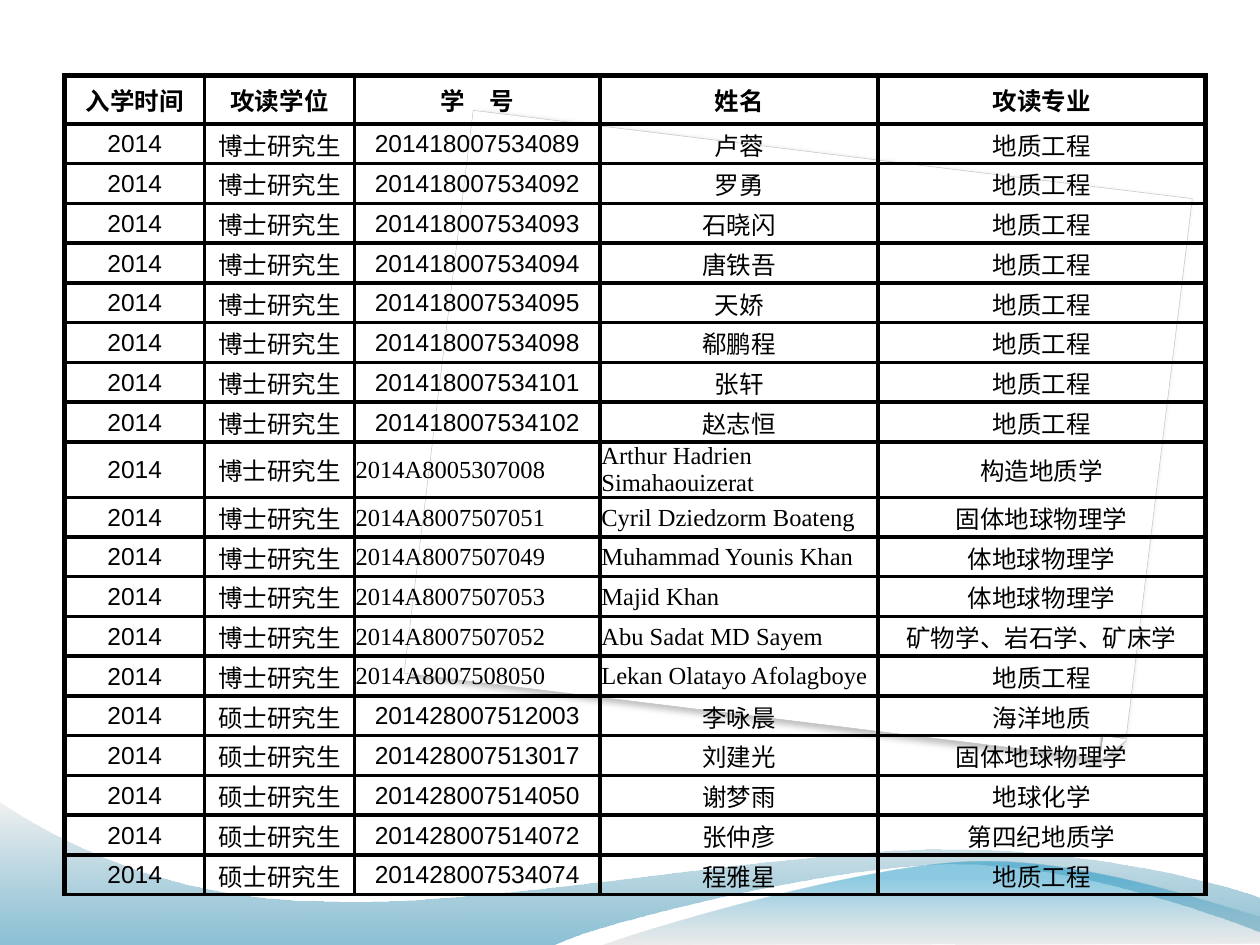
from lxml import etree
from pptx import Presentation
from pptx.dml.color import RGBColor
from pptx.enum.shapes import MSO_SHAPE
from pptx.enum.text import MSO_ANCHOR, PP_ALIGN
from pptx.oxml.ns import qn
from pptx.util import Pt

BLACK = RGBColor(0x00, 0x00, 0x00)
WHITE = RGBColor(0xFF, 0xFF, 0xFF)
SILVER = RGBColor(0xC0, 0xC0, 0xC0)
DEEP_BLUE = RGBColor(0x00, 0x74, 0xA1)
BRIGHT_BLUE = RGBColor(0x00, 0x8B, 0xBF)
PALE_GREY = RGBColor(0xE7, 0xE7, 0xE7)
MID_GREY = RGBColor(0xBD, 0xBD, 0xBD)

SNIP_ROUND = MSO_SHAPE.SNIP_ROUND_RECTANGLE
RIGHT_TRIANGLE = MSO_SHAPE.RIGHT_TRIANGLE
CENTER, LEFT = PP_ALIGN.CENTER, PP_ALIGN.LEFT
MIDDLE = MSO_ANCHOR.MIDDLE

CJK_FONT = "Noto Sans CJK SC"
LATIN_FONT = "Arial"
FOREIGN_FONT = "Times New Roman"

COLUMN_WIDTHS = [80, 85.5, 140.5, 158.75, 187]
HEADER_HEIGHT, ROW_HEIGHT, TWO_LINE_HEIGHT = 27.6, 22.72, 31.4
INNER_LINE, OUTER_LINE = 2.25, 3

YEAR = "2014"
DOCTOR, MASTER = "博士研究生", "硕士研究生"
HEADER = ["入学时间", "攻读学位", "学　号", "姓名", "攻读专业"]
STUDENTS = [
    (DOCTOR, "201418007534089", "卢蓉", "地质工程"),
    (DOCTOR, "201418007534092", "罗勇", "地质工程"),
    (DOCTOR, "201418007534093", "石晓闪", "地质工程"),
    (DOCTOR, "201418007534094", "唐铁吾", "地质工程"),
    (DOCTOR, "201418007534095", "天娇", "地质工程"),
    (DOCTOR, "201418007534098", "郗鹏程", "地质工程"),
    (DOCTOR, "201418007534101", "张轩", "地质工程"),
    (DOCTOR, "201418007534102", "赵志恒", "地质工程"),
    (DOCTOR, "2014A8005307008", "Arthur Hadrien Simahaouizerat", "构造地质学"),
    (DOCTOR, "2014A8007507051", "Cyril Dziedzorm Boateng", "固体地球物理学"),
    (DOCTOR, "2014A8007507049", "Muhammad Younis Khan", "体地球物理学"),
    (DOCTOR, "2014A8007507053", "Majid Khan", "体地球物理学"),
    (DOCTOR, "2014A8007507052", "Abu Sadat MD Sayem", "矿物学、岩石学、矿床学"),
    (DOCTOR, "2014A8007508050", "Lekan Olatayo Afolagboye", "地质工程"),
    (MASTER, "201428007512003", "李咏晨", "海洋地质"),
    (MASTER, "201428007513017", "刘建光", "固体地球物理学"),
    (MASTER, "201428007514050", "谢梦雨", "地球化学"),
    (MASTER, "201428007514072", "张仲彦", "第四纪地质学"),
    (MASTER, "201428007534074", "程雅星", "地质工程"),
]

# Outlines in points: a pair is a straight step, six numbers are a cubic curve.
LONG_WAVE = [
    (0, 540), (316.8, 540),
    (342.7, 527, 478.1, 493.9, 545.8, 493.9),
    (614.2, 493.9, 689.8, 521.3, 720, 532.8),
    (720.7, 513.4),
    (707.8, 507.6, 626.4, 484.6, 537.1, 485.3),
    (447.8, 485.3, 275, 519.1, 185, 514.8),
    (92.9, 514.1, 33.1, 479.5, -0.7, 457.9),
]
RIGHT_WAVE = [
    (344.9, 540),
    (366.5, 531.4, 491, 494.6, 553.7, 492.5),
    (616.3, 489.6, 691.9, 516.2, 720, 524.2),
    (720, 539.3),
]


def add_element(parent, tag, **attributes):
    return etree.SubElement(parent, qn(tag), attributes)


def add_shadow(shape, opacity, blur, distance, angle, **skew):
    effects = add_element(shape._element.spPr, "a:effectLst")
    shadow = add_element(effects, "a:outerShdw", blurRad=str(Pt(blur)), dist=str(Pt(distance)),
                         dir=str(angle * 60000), algn="tl", rotWithShape="0", **skew)
    color = add_element(shadow, "a:srgbClr", val=str(BLACK))
    add_element(color, "a:alpha", val=str(opacity * 1000))


def add_paper(slide, kind, box, line_color, line_width):
    """Add a white, tilted, upside-down shape of the paper sheet."""
    shape = slide.shapes.add_shape(kind, *map(Pt, box))
    shape.rotation = 7
    shape._element.spPr.xfrm.set("flipV", "1")
    shape.fill.solid()
    shape.fill.fore_color.rgb = WHITE
    shape.line.color.rgb = line_color
    shape.line.width = Pt(line_width)
    return shape


def bend(shape, outline):
    """Turn the straight steps of a freeform into the outline's cubic curves."""
    steps = list(shape._element.spPr.iter(qn("a:lnTo")))
    for step, segment in zip(steps, outline[1:]):
        if len(segment) == 6:
            curve = etree.Element(qn("a:cubicBezTo"))
            for x, y in zip(segment[::2], segment[1::2]):
                add_element(curve, "a:pt", x=str(Pt(x) - shape.left), y=str(Pt(y) - shape.top))
            step.getparent().replace(step, curve)


def add_wave(slide, outline, stops):
    """Add a wave filled upwards through (position, colour, opacity) stops."""
    anchors = [(Pt(segment[-2]), Pt(segment[-1])) for segment in outline]
    builder = slide.shapes.build_freeform(*anchors[0])
    builder.add_line_segments(anchors[1:], close=True)
    wave = builder.convert_to_shape()
    bend(wave, outline)
    wave.shadow.inherit = False
    wave.line.fill.background()
    wave.fill.gradient()
    wave.fill.gradient_angle = 90
    for stop, (position, color, _) in zip(wave.fill.gradient_stops, stops):
        stop.position = position
        stop.color.rgb = color
    for color, (_, _, opacity) in zip(wave._element.spPr.iter(qn("a:srgbClr")), stops):
        add_element(color, "a:alpha", val=str(opacity * 1000))


def set_borders(cell, left, right, top):
    widths = {"a:lnL": left, "a:lnR": right, "a:lnT": top, "a:lnB": INNER_LINE}
    properties = cell._tc.get_or_add_tcPr()
    for tag, width in widths.items():
        line = add_element(properties, tag, w=str(Pt(width)))
        add_element(add_element(line, "a:solidFill"), "a:srgbClr", val=str(BLACK))


def fill_cell(cell, text, font_name, alignment, bold):
    cell.fill.background()
    cell.vertical_anchor = MIDDLE
    cell.text_frame.text = text
    paragraph = cell.text_frame.paragraphs[0]
    paragraph.alignment = alignment
    run = paragraph.runs[0]
    run.font.name = font_name
    run.font.size = Pt(14)
    run.font.bold = bold
    run.font.color.rgb = BLACK
    add_element(run.font._element, "a:ea", typeface=CJK_FONT)


def add_student_table(slide):
    rows = [HEADER] + [(YEAR, *student) for student in STUDENTS]
    last = len(HEADER) - 1
    table = slide.shapes.add_table(len(rows), len(HEADER), Pt(37), Pt(43.2), Pt(sum(COLUMN_WIDTHS)),
                                   Pt(ROW_HEIGHT * len(rows))).table
    table.first_row = table.horz_banding = False
    for column, width in zip(table.columns, COLUMN_WIDTHS):
        column.width = Pt(width)
    for i, row in enumerate(rows):
        is_header = i == 0
        two_lines = len(row[3]) > 25
        table.rows[i].height = Pt(HEADER_HEIGHT if is_header else
                                  TWO_LINE_HEIGHT if two_lines else ROW_HEIGHT)
        for j, text in enumerate(row):
            cell = table.cell(i, j)
            foreign = j in (2, 3) and "A" in row[2]
            set_borders(cell, OUTER_LINE if j == 0 else INNER_LINE,
                        OUTER_LINE if j == last else INNER_LINE,
                        OUTER_LINE if is_header else INNER_LINE)
            font_name = CJK_FONT if is_header else FOREIGN_FONT if foreign else LATIN_FONT
            fill_cell(cell, text, font_name, LEFT if foreign else CENTER, is_header)
            if not is_header:
                cell.margin_left = cell.margin_right = cell.margin_top = Pt(0.7)
                cell.margin_bottom = 0


def main():
    presentation = Presentation()
    presentation.slide_width, presentation.slide_height = Pt(720), Pt(540)
    slide = presentation.slides.add_slide(presentation.slide_layouts[6])
    sheet = add_paper(slide, SNIP_ROUND, (249.1, 87.1, 414, 324), SILVER, 0.25)
    sheet.adjustments[0], sheet.adjustments[1] = 0, 0.036
    add_shadow(sheet, 25, 4, 3, 125, sx="98500", sy="100080", kx="100000")
    corner = add_paper(slide, RIGHT_TRIANGLE, (630, 421.9, 12.2, 12.2), WHITE, 1)
    add_shadow(corner, 47, 1.6, 0.5, 215)
    add_wave(slide, LONG_WAVE, [(0, DEEP_BLUE, 45), (1, PALE_GREY, 55)])
    add_wave(slide, RIGHT_WAVE, [(0, MID_GREY, 30), (0.8, BRIGHT_BLUE, 45)])
    add_student_table(slide)
    presentation.save("out.pptx")


if __name__ == "__main__":
    main()
